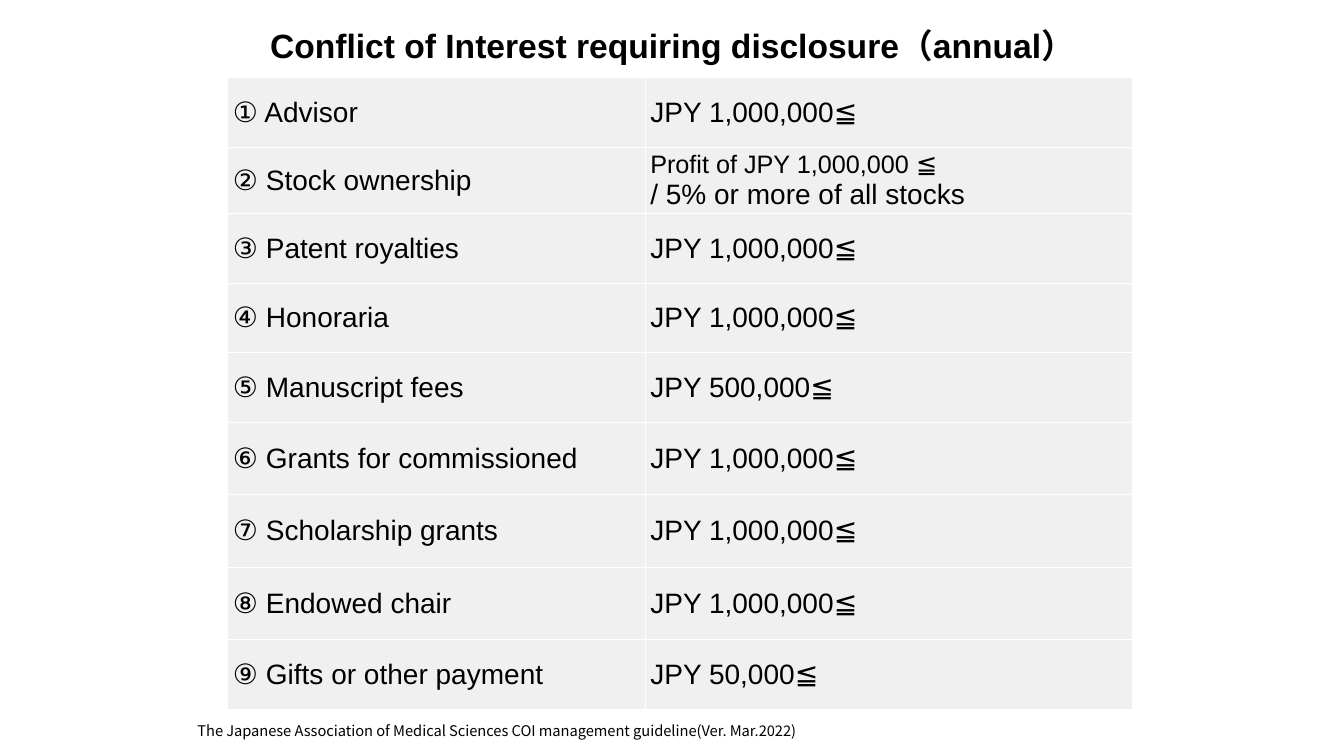
import pptx
import pptx.util
import pptx.dml.color
import pptx.enum.text
import pptx.oxml
import pptx.oxml.ns

COLORS = {"text": "000000", "cell": "F0F0F0", "border": "FFFFFF"}
SANS, CJK = "Arial", "Noto Sans CJK JP"
Inches = pptx.util.Inches
ALIGN = pptx.enum.text.PP_ALIGN
MIDDLE = pptx.enum.text.MSO_ANCHOR.MIDDLE

COLUMNS = [4.14, 4.83]
ROWS = [0.69, 0.66, 0.69, 0.69, 0.69, 0.72, 0.72, 0.72, 0.69]
MILLION = "JPY 1,000,000≦"
DISCLOSURES = [
    ("① Advisor", [MILLION]),
    ("② Stock ownership", ["Profit of JPY 1,000,000 ≦", "/ 5% or more of all stocks"]),
    ("③ Patent royalties", [MILLION]),
    ("④ Honoraria", [MILLION]),
    ("⑤ Manuscript fees", ["JPY 500,000≦"]),
    ("⑥ Grants for commissioned", [MILLION]),
    ("⑦ Scholarship grants", [MILLION]),
    ("⑧ Endowed chair", [MILLION]),
    ("⑨ Gifts or other payment", ["JPY 50,000≦"]),
]
HANGING_ROWS = (0, 5)


def rgb(name):
    return pptx.dml.color.RGBColor.from_string(COLORS[name])


def style(paragraph, size, font=SANS, bold=False, align=ALIGN.LEFT):
    paragraph.alignment = align
    paragraph.font.size = pptx.util.Pt(size)
    paragraph.font.name = font
    paragraph.font.bold = bold
    paragraph.font.color.rgb = rgb("text")


def add_title(slide, left, top, width, height):
    title = slide.shapes.title
    title.left, title.top, title.width, title.height = map(Inches, (left, top, width, height))
    title.text_frame.text = "Conflict of Interest requiring disclosure（annual）"
    title.text_frame.vertical_anchor = MIDDLE
    style(title.text_frame.paragraphs[0], 24, bold=True, align=ALIGN.CENTER)


def format_cell(cell, lines):
    cell.margin_left = cell.margin_right = Inches(0.05)
    cell.margin_top = cell.margin_bottom = 0
    cell.vertical_anchor = MIDDLE
    cell.fill.solid()
    cell.fill.fore_color.rgb = rgb("cell")
    cell.text_frame.text = "\n".join(lines)
    # Borders come before the fill in the cell properties
    properties = cell._tc.get_or_add_tcPr()
    for index, side in enumerate(("lnL", "lnR", "lnT", "lnB")):
        properties.insert(index, pptx.oxml.parse_xml(
            f'<a:{side} {pptx.oxml.ns.nsdecls("a")} w="12700"><a:solidFill>'
            f'<a:srgbClr val="{COLORS["border"]}"/></a:solidFill></a:{side}>'))


def add_disclosure_table(slide, left, top):
    frame = slide.shapes.add_table(len(ROWS), len(COLUMNS), Inches(left), Inches(top),
                                   Inches(sum(COLUMNS)), Inches(sum(ROWS)))
    table = frame.table
    table.first_row = table.horz_banding = False
    for column, width in zip(table.columns, COLUMNS):
        column.width = Inches(width)
    for row, height in zip(table.rows, ROWS):
        row.height = Inches(height)

    for index, (category, amounts) in enumerate(DISCLOSURES):
        # Category
        cell = table.cell(index, 0)
        format_cell(cell, [category])
        paragraph = cell.text_frame.paragraphs[0]
        if index in HANGING_ROWS:
            indent = Inches(0.39)
            paragraph_properties = paragraph._p.get_or_add_pPr()
            paragraph_properties.set("marL", str(indent))
            paragraph_properties.set("indent", str(-indent))
        style(paragraph, 20)
        # Threshold: the first of two lines is smaller
        cell = table.cell(index, 1)
        format_cell(cell, amounts)
        for paragraph in cell.text_frame.paragraphs:
            style(paragraph, 20, align=ALIGN.JUSTIFY)
        if len(amounts) > 1:
            style(cell.text_frame.paragraphs[0], 18)


def add_source_note(slide, left, top, width, height):
    note = slide.shapes.add_textbox(*map(Inches, (left, top, width, height)))
    note.text_frame.word_wrap = True
    note.text_frame.text = ("The Japanese Association of Medical Sciences "
                            "COI management guideline(Ver. Mar.2022)")
    style(note.text_frame.paragraphs[0], 10.5, font=CJK)


def main():
    presentation = pptx.Presentation()
    presentation.slide_width, presentation.slide_height = Inches(13.33), Inches(7.5)
    slide = presentation.slides.add_slide(presentation.slide_layouts[5])
    add_title(slide, 2.08, 0.2, 9.18, 0.5)
    add_disclosure_table(slide, 2.26, 0.77)
    add_source_note(slide, 1.86, 7.11, 7.6, 0.28)
    presentation.save("out.pptx")


if __name__ == "__main__":
    main()
